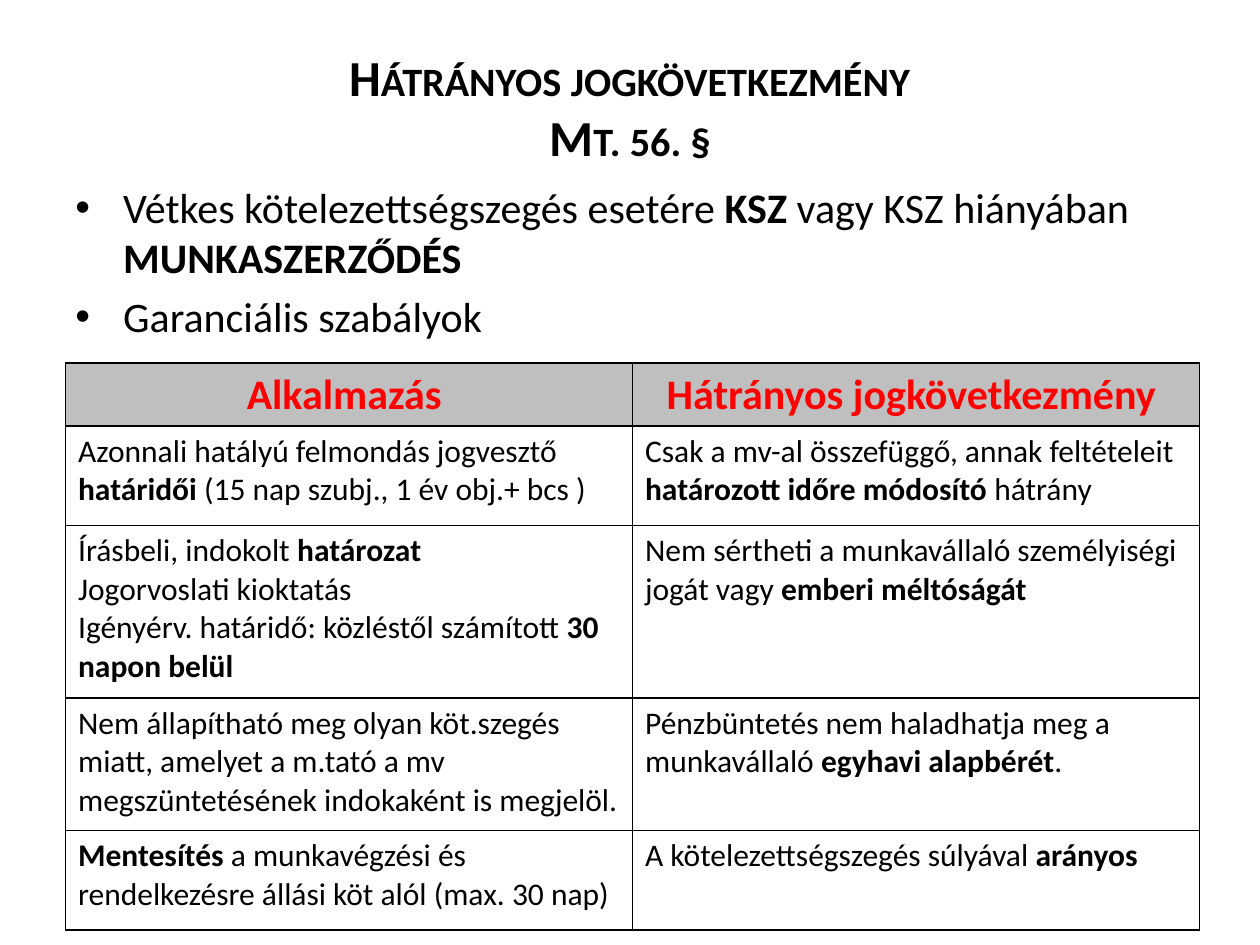
from lxml import etree
from pptx import Presentation
from pptx.dml.color import RGBColor
from pptx.enum.text import MSO_ANCHOR, PP_ALIGN
from pptx.oxml.ns import qn
from pptx.util import Inches, Pt

CENTER, LEFT = PP_ALIGN.CENTER, PP_ALIGN.LEFT
MIDDLE, TOP = MSO_ANCHOR.MIDDLE, MSO_ANCHOR.TOP
BLACK, RED, GREY = "000000", "FF0000", "BFBFBF"
FONT = "Calibri"

TITLE = ["Hátrányos jogkövetkezmény", "Mt. 56. §"]
BULLETS = [
    "Vétkes kötelezettségszegés esetére **KSZ **vagy KSZ hiányában **MUNKASZERZŐDÉS**",
    "Garanciális szabályok",
]
HEADINGS = ["**Alkalmazás **", "**Hátrányos jogkövetkezmény **"]
RULES = [
    ["Azonnali hatályú felmondás jogvesztő **határidői** (15 nap szubj., 1 év obj.+ bcs )",
     "Csak a mv-al összefüggő, annak feltételeit **határozott időre módosító **hátrány"],
    ["Írásbeli, indokolt **határozat**\nJogorvoslati kioktatás\n"
     "Igényérv. határidő: közléstől számított** 30 napon belül**",
     "Nem sértheti a munkavállaló személyiségi jogát vagy **emberi méltóságát**"],
    ["Nem állapítható meg olyan köt.szegés miatt, amelyet a m.tató a mv "
     "megszüntetésének indokaként is megjelöl.",
     "Pénzbüntetés nem haladhatja meg a munkavállaló **egyhavi alapbérét**."],
    ["**Mentesítés** a munkavégzési és rendelkezésre állási köt alól (max. 30 nap)",
     "A kötelezettségszegés súlyával **arányos**"],
]
ROW_HEIGHTS = [0.5, 0.79, 1.37, 1.05, 0.79]
COLUMN_WIDTH = 4.5


def color(value):
    return RGBColor.from_string(value)


def apply(target, values):
    for name, value in values.items():
        setattr(target, name, value)


class SlideBuilder:
    def __init__(self, slide):
        self.slide = slide

    def run(self, paragraph, text, size, bold=False, ink=BLACK):
        run = paragraph.add_run()
        run.text = text
        apply(run.font, {"name": FONT, "size": Pt(size), "bold": bold})
        run.font.color.rgb = color(ink)
        return run

    def marked_text(self, paragraph, text, size, ink=BLACK):
        for index, part in enumerate(text.split("**")):
            if part:
                self.run(paragraph, part, size, index % 2 == 1, ink)

    def text_frame(self, left, top, width, height, anchor):
        box = self.slide.shapes.add_textbox(
            Inches(left), Inches(top), Inches(width), Inches(height))
        apply(box.text_frame, {"word_wrap": True, "vertical_anchor": anchor})
        return box.text_frame

    def title(self, lines, *place):
        paragraph = self.text_frame(*place, MIDDLE).paragraphs[0]
        paragraph.alignment = CENTER
        for index, line in enumerate(lines):
            if index:
                paragraph.add_line_break()
            run = self.run(paragraph, line, 28.8, True)
            run.font._element.set("cap", "small")

    def bullets(self, items, *place):
        frame = self.text_frame(*place, TOP)
        for index, item in enumerate(items):
            paragraph = frame.add_paragraph() if index else frame.paragraphs[0]
            paragraph.space_before = Pt(4.8)
            properties = paragraph._p.get_or_add_pPr()
            properties.set("marL", str(Inches(0.38)))
            properties.set("indent", str(-Inches(0.38)))
            etree.SubElement(properties, qn("a:buFont")).set("typeface", "Arial")
            etree.SubElement(properties, qn("a:buChar")).set("char", "•")
            self.marked_text(paragraph, item, 24)

    def borders(self, cell):
        properties = cell._tc.get_or_add_tcPr()
        for side in ("L", "R", "T", "B"):
            line = etree.SubElement(properties, qn(f"a:ln{side}"), w=str(Pt(1)))
            fill = etree.SubElement(line, qn("a:solidFill"))
            etree.SubElement(fill, qn("a:srgbClr"), val=BLACK)

    def cell(self, cell, text, heading):
        self.borders(cell)
        if heading:
            cell.fill.solid()
            cell.fill.fore_color.rgb = color(GREY)
        else:
            cell.fill.background()
        size, ink, alignment = (24, RED, CENTER) if heading else (18, BLACK, LEFT)
        for index, line in enumerate(text.split("\n")):
            frame = cell.text_frame
            paragraph = frame.add_paragraph() if index else frame.paragraphs[0]
            paragraph.alignment = alignment
            self.marked_text(paragraph, line, size, ink)

    def table(self, rows, left, top):
        columns = len(rows[0])
        table = self.slide.shapes.add_table(
            len(rows), columns, Inches(left), Inches(top),
            Inches(COLUMN_WIDTH * columns), Inches(sum(ROW_HEIGHTS))).table
        apply(table, {"first_row": False, "horz_banding": False})
        for row_index, (row, height) in enumerate(zip(rows, ROW_HEIGHTS)):
            table.rows[row_index].height = Inches(height)
            for column_index, text in enumerate(row):
                self.cell(table.cell(row_index, column_index), text, row_index == 0)


def main():
    presentation = Presentation()
    apply(presentation, {"slide_width": Inches(10), "slide_height": Inches(7.5)})
    builder = SlideBuilder(presentation.slides.add_slide(presentation.slide_layouts[6]))
    builder.title(TITLE, 0.5, 0.3, 9, 1.09)
    builder.bullets(BULLETS, 0.5, 1.39, 9, 5.31)
    builder.table([HEADINGS] + RULES, 0.52, 2.88)
    presentation.save("out.pptx")


if __name__ == "__main__":
    main()
